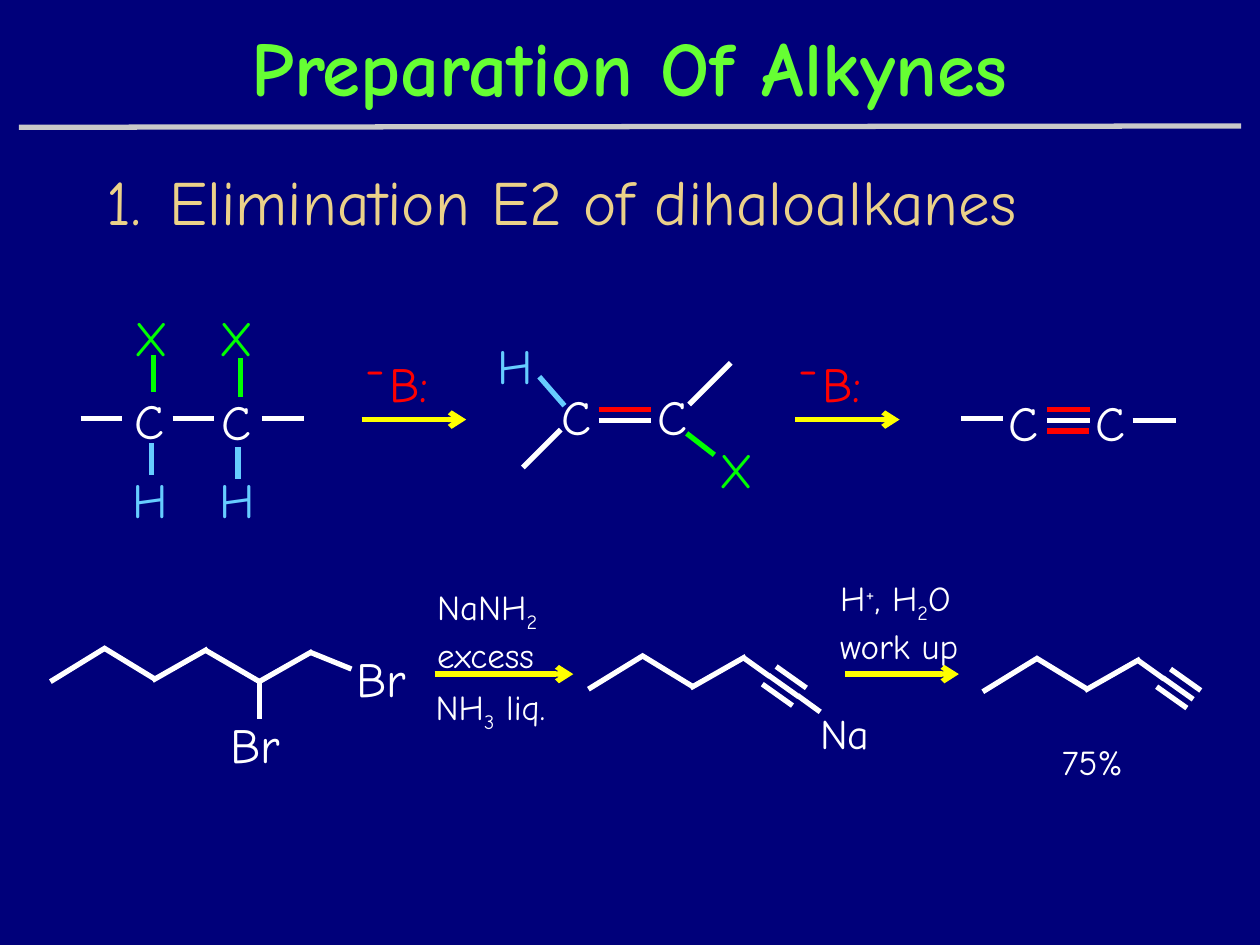
"""Builds a slide on the preparation of alkynes from dihaloalkanes."""
from pptx import Presentation, util as u
from pptx.dml.color import RGBColor
from pptx.enum import shapes, text
from pptx.oxml.ns import qn
from lxml import etree

WHITE, RED, GREEN, BLUE, YELLOW = "FFFFFF", "FF0000", "00FF00", "66CCFF", "FFFF00"
ZIGZAG = [(0, 0, 0.44, -0.27), (0.42, -0.27, 0.83, -0.02), (0.81, -0.01, 1.25, -0.26)]
TRIPLE_END = [(1.23, -0.25, 1.44, -0.1), (1.43, -0.11, 1.67, 0.06),
              (1.38, -0.04, 1.62, 0.13), (1.49, -0.18, 1.73, -0.01)]


def rgb(value):
    return RGBColor.from_string(value)


class Board:
    font = "Comic Neue"
    line_width = u.Pt(3)

    def __init__(self, slide, background):
        self.slide = slide
        slide.background.fill.solid()
        slide.background.fill.fore_color.rgb = rgb(background)

    def label(self, left, top, width, height, parts, size=28, color=WHITE, bold=False):
        box = self.slide.shapes.add_textbox(*map(u.Inches, (left, top, width, height)))
        frame = box.text_frame
        frame.word_wrap = True
        for words, baseline in [(parts, 0)] if isinstance(parts, str) else parts:
            run = frame.paragraphs[0].add_run()
            run.text = words
            run.font.name, run.font.size, run.font.bold = self.font, u.Pt(size), bold
            run.font.color.rgb = rgb(color)
            if baseline:
                run.font._element.set("baseline", str(baseline * 1000))
        return frame

    def title(self, left, top, width, height, words):
        frame = self.label(left, top, width, height, words, 44, "66FF33", True)
        frame.vertical_anchor = text.MSO_ANCHOR.MIDDLE
        frame.paragraphs[0].alignment = text.PP_ALIGN.CENTER

    def numbered(self, left, top, width, height, words):
        frame = self.label(left, top, width, height, words, 36, "EBD189")
        properties = frame.paragraphs[0]._p.get_or_add_pPr()
        properties.set("marL", str(u.Inches(0.5)))
        properties.set("indent", str(-u.Inches(0.5)))
        etree.SubElement(properties, qn("a:buFont"), typeface=self.font)
        etree.SubElement(properties, qn("a:buAutoNum"), type="arabicPeriod")

    def line(self, x1, y1, x2, y2, color=WHITE):
        connector = self.slide.shapes.add_connector(
            shapes.MSO_CONNECTOR.STRAIGHT, *map(u.Inches, (x1, y1, x2, y2)))
        connector.line.width = self.line_width
        connector.line.color.rgb = rgb(color)
        etree.SubElement(connector._element.spPr, qn("a:effectLst"))
        return connector

    def arrow(self, x1, x2, y):
        connector = self.line(x1, y, x2, y, YELLOW)
        etree.SubElement(connector.line._get_or_add_ln(), qn("a:tailEnd"), type="arrow")

    def chain(self, x, y, bonds):
        for x1, y1, x2, y2 in bonds:
            self.line(x + x1, y + y1, x + x2, y + y2)


def draw_general_reaction(board):
    for left, top in [(0.97, 3.05), (1.66, 3.06), (4.36, 3.02), (5.12, 3.02),
                      (7.91, 3.07), (8.6, 3.07)]:
        board.label(left, top, 0.7, 0.57, "C")
    for left, top in [(0.95, 3.68), (1.64, 3.68), (3.85, 2.61)]:
        board.label(left, top, 0.73, 0.57, "H", color=BLUE)
    for left, top in [(0.97, 2.39), (1.64, 2.39), (5.61, 3.44)]:
        board.label(left, top, 0.67, 0.57, "X", color=GREEN)
    bonds = {
        WHITE: [(0.64, 3.32, 0.97, 3.32), (1.37, 3.32, 1.7, 3.32), (2.08, 3.32, 2.41, 3.32),
                (4.75, 3.34, 5.17, 3.34), (5.47, 3.21, 5.8, 2.88), (4.45, 3.41, 4.15, 3.71),
                (7.63, 3.32, 7.96, 3.32), (8.31, 3.34, 8.65, 3.34), (8.99, 3.34, 9.33, 3.34)],
        BLUE: [(1.2, 3.77, 1.2, 3.52), (1.89, 3.8, 1.89, 3.55), (4.48, 3.22, 4.28, 2.99)],
        GREEN: [(1.22, 3.11, 1.22, 2.82), (1.91, 3.15, 1.91, 2.84), (5.45, 3.44, 5.67, 3.61)],
        RED: [(4.75, 3.25, 5.17, 3.25), (8.31, 3.25, 8.65, 3.25), (8.31, 3.42, 8.64, 3.42)],
    }
    for color, lines in bonds.items():
        for ends in lines:
            board.line(*ends, color)
    for x in (2.87, 6.31):
        board.arrow(x, x + 0.83, 3.33)
        board.label(x + 0.12, 2.76, 0.75, 0.57, "B:", color=RED)
        board.label(x - 0.07, 2.62, 0.5, 0.57, "-", color=RED)


def draw_example(board):
    board.chain(0.4, 5.41, ZIGZAG)
    for ends in [(1.63, 5.16, 2.06, 5.41), (2.04, 5.42, 2.48, 5.17),
                 (2.47, 5.18, 2.79, 5.31), (2.06, 5.42, 2.06, 5.71)]:
        board.line(*ends)
    board.label(2.73, 5.1, 0.88, 0.57, "Br")
    board.label(1.73, 5.62, 0.88, 0.57, "Br")

    board.chain(4.67, 5.47, ZIGZAG + TRIPLE_END)
    board.line(6.33, 5.52, 6.51, 5.65)
    board.label(6.41, 5.57, 0.79, 0.5, "Na", 24)
    board.chain(7.8, 5.49, ZIGZAG + TRIPLE_END)

    board.label(3.37, 4.6, 1.21, 0.77, [("NaNH", 0), ("2", -25), (" excess", 0)], 20)
    board.label(3.36, 5.39, 1.4, 0.43, [("NH", 0), ("3", -25), (" liq.", 0)], 20)
    board.label(6.57, 4.53, 1.27, 0.77,
                [("H", 0), ("+", 30), (", H", 0), ("2", -25), ("O work up", 0)], 20)
    board.label(8.33, 5.83, 1.25, 0.43, "75%", 20)
    board.arrow(3.45, 4.55, 5.35)
    board.arrow(6.71, 7.61, 5.35)


def main():
    presentation = Presentation()
    presentation.slide_width, presentation.slide_height = u.Inches(10), u.Inches(7.5)
    slide = presentation.slides.add_slide(presentation.slide_layouts[6])
    board = Board(slide, "00007A")
    board.title(0.75, 0.03, 8.5, 0.98, "Preparation Of Alkynes")
    board.line(0.15, 1.01, 9.85, 1, "C9C9C9")
    board.numbered(0.75, 1.24, 8.04, 0.7, "Elimination E2 of dihaloalkanes")
    draw_general_reaction(board)
    draw_example(board)
    presentation.save("out.pptx")


if __name__ == "__main__":
    main()
